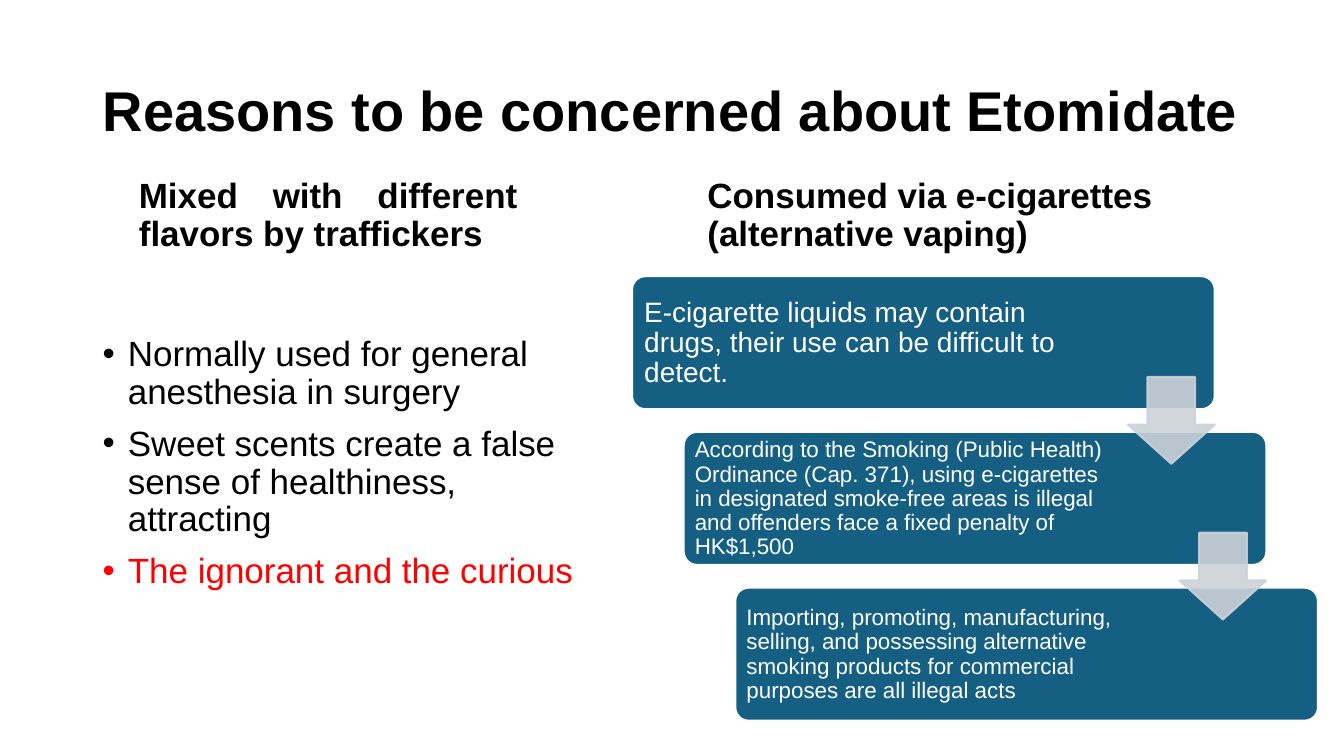
import pptx
import pptx.dml.color
import pptx.enum.shapes
import pptx.enum.text
import pptx.oxml.ns
import pptx.util
from lxml import etree

RGBColor = pptx.dml.color.RGBColor
BLACK = RGBColor(0x00, 0x00, 0x00)
WHITE = RGBColor(0xFF, 0xFF, 0xFF)
RED = RGBColor(0xFF, 0x00, 0x00)
TEAL = RGBColor(0x15, 0x60, 0x82)
GREY = RGBColor(0xCC, 0xD2, 0xD8)

Shape = pptx.enum.shapes.MSO_SHAPE
Anchor = pptx.enum.text.MSO_ANCHOR
Align = pptx.enum.text.PP_ALIGN

WIDTH = pptx.util.Inches(13.333)
HEIGHT = pptx.util.Inches(7.5)

# Places are left, top, width, height in percent of the slide.
TITLE = (6.9, 5.33, 86.25, 19.33)
LEFT_HEADING = (9.6, 22.27, 29.63, 12)
RIGHT_HEADING = (51.9, 22.27, 36.68, 12)
REASON_LIST = (6.9, 43.87, 38.78, 46.4)
FIRST_CARD = (47.03, 36.53, 43.36, 17.6)
FIRST_CARD_TEXT = (47.33, 37.07, 32.55, 16.67)
FIRST_ARROW = (83.93, 49.87, 6.45, 11.47)
STEP_RIGHT, STEP_DOWN = 3.84, 20.6

REASONS = [
    ("Normally used for general anesthesia in surgery", BLACK),
    ("Sweet scents create a false sense of healthiness, attracting", BLACK),
    ("The ignorant and the curious", RED),
]
# Text, size in points, text margin in inches
STEPS = [
    ("E-cigarette liquids may contain drugs, their use can be difficult to detect.", 20, 0.08),
    ("According to the Smoking (Public Health) Ordinance (Cap. 371), using e-cigarettes "
     "in designated smoke-free areas is illegal and offenders face a fixed penalty of "
     "HK$1,500", 16, 0.07),
    ("Importing, promoting, manufacturing, selling, and possessing alternative smoking "
     "products for commercial purposes are all illegal acts", 16, 0.07),
]


def to_lengths(place):
    left, top, width, height = place
    return (int(WIDTH * left / 100), int(HEIGHT * top / 100),
            int(WIDTH * width / 100), int(HEIGHT * height / 100))


def stepped(place, index):
    """Move a place along the staircase by index steps."""
    left, top, width, height = place
    return left + index * STEP_RIGHT, top + index * STEP_DOWN, width, height


def add_text_box(page, place, anchor, margin=None):
    frame = page.shapes.add_textbox(*to_lengths(place)).text_frame
    frame.word_wrap = True
    frame.vertical_anchor = anchor
    if margin is not None:
        frame.margin_left = frame.margin_right = pptx.util.Inches(margin)
        frame.margin_top = frame.margin_bottom = pptx.util.Inches(margin)
    return frame


def write(para, text, size, color=BLACK, bold=False, space_before=0):
    para.line_spacing = 0.9
    para.space_before = pptx.util.Pt(space_before)
    span = para.add_run()
    span.text = text
    span.font.name = "Arial"
    span.font.size = pptx.util.Pt(size)
    span.font.bold = bold
    span.font.color.rgb = color


def add_heading(page, place, text, align=Align.LEFT):
    para = add_text_box(page, place, Anchor.BOTTOM).paragraphs[0]
    para.alignment = align
    write(para, text, 25, bold=True, space_before=10)


def add_bullet(para):
    indent = pptx.util.Inches(0.25)
    properties = para._p.get_or_add_pPr()
    properties.set("marL", str(indent))
    properties.set("indent", str(-indent))
    font = etree.SubElement(properties, pptx.oxml.ns.qn("a:buFont"))
    font.set("typeface", "Arial")
    etree.SubElement(properties, pptx.oxml.ns.qn("a:buChar")).set("char", "•")


def add_bullet_list(page, place, items):
    frame = add_text_box(page, place, Anchor.TOP)
    for index, (text, color) in enumerate(items):
        para = frame.add_paragraph() if index else frame.paragraphs[0]
        write(para, text, 25, color, space_before=10)
        add_bullet(para)


def add_filled_shape(page, kind, place, adjustments, fill, line):
    shape = page.shapes.add_shape(kind, *to_lengths(place))
    for index, value in enumerate(adjustments):
        shape.adjustments[index] = value
    shape.shadow.inherit = False
    shape.fill.solid()
    shape.fill.fore_color.rgb = fill
    shape.line.color.rgb = line
    shape.line.width = pptx.util.Pt(1.5)
    return shape


def add_step_card(page, index, text, size, margin):
    add_filled_shape(page, Shape.ROUNDED_RECTANGLE, stepped(FIRST_CARD, index),
                     [0.1], TEAL, WHITE)
    frame = add_text_box(page, stepped(FIRST_CARD_TEXT, index), Anchor.MIDDLE, margin)
    write(frame.paragraphs[0], text, size, WHITE)


def add_step_arrow(page, index):
    arrow = add_filled_shape(page, Shape.DOWN_ARROW, stepped(FIRST_ARROW, index),
                             [0.55, 0.45], GREY, GREY)
    for color in arrow._element.spPr.iter(pptx.oxml.ns.qn("a:srgbClr")):
        etree.SubElement(color, pptx.oxml.ns.qn("a:alpha")).set("val", "90000")


def main():
    deck = pptx.Presentation()
    deck.slide_width, deck.slide_height = WIDTH, HEIGHT
    page = deck.slides.add_slide(deck.slide_layouts[6])

    title = add_text_box(page, TITLE, Anchor.MIDDLE)
    write(title.paragraphs[0], "Reasons to be concerned about Etomidate", 40, bold=True)
    add_heading(page, LEFT_HEADING, "Mixed with different flavors by traffickers",
                Align.JUSTIFY)
    add_bullet_list(page, REASON_LIST, REASONS)
    add_heading(page, RIGHT_HEADING, "Consumed via e-cigarettes (alternative vaping)")

    for index, (text, size, margin) in enumerate(STEPS):
        add_step_card(page, index, text, size, margin)
    for index in range(len(STEPS) - 1):
        add_step_arrow(page, index)
    deck.save("out.pptx")


if __name__ == "__main__":
    main()
